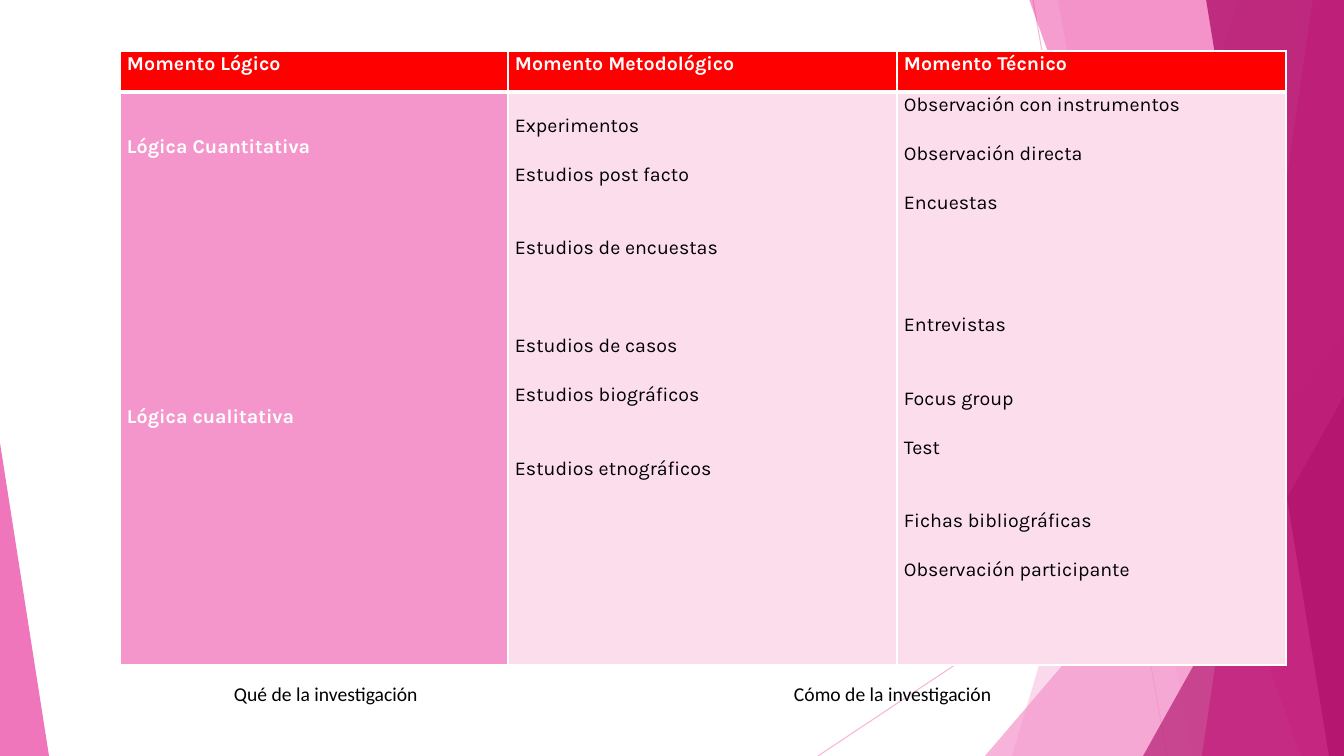
"""Build the slide on the logical, methodological and technical moments of research."""

from dataclasses import dataclass

from lxml import etree
from pptx import Presentation
from pptx import util as u
from pptx.dml.color import RGBColor
from pptx.enum import shapes, text
from pptx.oxml import ns

WHITE = RGBColor(0xFF, 0xFF, 0xFF)
BLACK = RGBColor(0x00, 0x00, 0x00)
RED = RGBColor(0xFF, 0x00, 0x00)
LIGHT_PINK = RGBColor(0xF4, 0x96, 0xCB)
PALE_PINK = RGBColor(0xFB, 0xDD, 0xEC)
PINK = RGBColor(0xEB, 0x3D, 0x9F)
MAGENTA = RGBColor(0xB2, 0x13, 0x6D)

SLIDE_W, SLIDE_H = 1344, 756
EMU_PER_PX = 12192000 / SLIDE_W
TEXT_SIZE = u.Pt(14)
LINE_PITCH = 17.5
TABLE_LEFT, TABLE_TOP = 120, 51
COLUMN_WIDTHS = (388, 389, 389)
ROW_HEIGHTS = (41, 573)


def px(length: int) -> u.Emu:
    """Turn pixels into EMU."""
    return u.Emu(round(length * EMU_PER_PX))


@dataclass(frozen=True)
class Ray:
    """A thin straight line behind the table."""

    x1: int
    y1: int
    x2: int
    y2: int


@dataclass(frozen=True)
class Band:
    """A full-height facet reaching the right edge of the slide."""

    top_x: int
    bottom_x: int
    color: RGBColor
    opacity: int


@dataclass(frozen=True)
class Wedge:
    """A right-angled triangle standing on the bottom edge."""

    left: int
    top: int
    width: int
    apex: int
    color: RGBColor
    opacity: int


@dataclass(frozen=True)
class Entry:
    """A line of a cell, with the number of empty lines above it."""

    wording: str
    lines_above: int = 0


@dataclass(frozen=True)
class Moment:
    """A table column: heading, entries and look of its body cell."""

    heading: str
    entries: tuple[Entry, ...]
    offset: int
    fill: RGBColor
    ink: RGBColor
    bold: bool


@dataclass(frozen=True)
class Caption:
    """A label below the table."""

    wording: str
    left: int


RAYS = (Ray(1033, 0, 1167, 756), Ray(1344, 406, 818, 756))
FACETS = (
    Band(1238, 1012, LIGHT_PINK, 36),
    Band(1058, 1192, LIGHT_PINK, 20),
    Wedge(985, 336, 359, 1, LIGHT_PINK, 72),
    Band(1029, 1301, PINK, 50),
    Band(1313, 1202, PINK, 70),
    Band(1206, 1329, MAGENTA, 80),
    Wedge(1143, 396, 201, 1, MAGENTA, 66),
    Wedge(0, 443, 49, 0, PINK, 70),
)
MOMENTS = (
    Moment("Momento Lógico",
           (Entry("Lógica Cuantitativa"), Entry("Lógica cualitativa", 10)),
           42, LIGHT_PINK, WHITE, True),
    Moment("Momento Metodológico",
           (Entry("Experimentos"), Entry("Estudios post facto", 1),
            Entry("Estudios de encuestas", 2), Entry("Estudios de casos", 3),
            Entry("Estudios biográficos", 1), Entry("Estudios etnográficos", 2)),
           21, PALE_PINK, BLACK, False),
    Moment("Momento Técnico",
           (Entry("Observación con instrumentos"), Entry("Observación directa", 1),
            Entry("Encuestas", 1), Entry("Entrevistas", 4), Entry("Focus group", 2),
            Entry("Test", 1), Entry("Fichas bibliográficas", 2),
            Entry("Observación participante", 1)),
           0, PALE_PINK, BLACK, False),
)
CAPTIONS = (Caption("Qué de la investigación", 234), Caption("Cómo de la investigación", 794))


def set_opacity(item, percent: int) -> None:
    """Make the colours of a shape or connector see-through."""
    for tint in item._element.spPr.iter(ns.qn("a:srgbClr")):
        etree.SubElement(tint, ns.qn("a:alpha"), val=str(percent * 1000))


def draw_ray(slide, ray: Ray) -> None:
    """Draw one thin line."""
    ends = map(px, (ray.x1, ray.y1, ray.x2, ray.y2))
    beam = slide.shapes.add_connector(shapes.MSO_CONNECTOR.STRAIGHT, *ends)
    beam.line.color.rgb = LIGHT_PINK
    beam.line.width = u.Pt(0.75)
    set_opacity(beam, 70)
    etree.SubElement(beam._element.spPr, ns.qn("a:effectLst"))


def draw_facet(slide, facet: Band | Wedge) -> None:
    """Draw one translucent facet."""
    if isinstance(facet, Band):
        outline = slide.shapes.build_freeform(facet.top_x, -1, scale=EMU_PER_PX)
        outline.add_line_segments(
            [(SLIDE_W, -1), (SLIDE_W, SLIDE_H), (facet.bottom_x, SLIDE_H)], close=True)
        pane = outline.convert_to_shape()
    else:
        box = map(px, (facet.left, facet.top, facet.width, SLIDE_H - facet.top))
        pane = slide.shapes.add_shape(shapes.MSO_SHAPE.ISOSCELES_TRIANGLE, *box)
        pane.adjustments[0] = facet.apex
    pane.shadow.inherit = False
    pane.fill.solid()
    pane.fill.fore_color.rgb = facet.color
    pane.line.fill.background()
    set_opacity(pane, facet.opacity)


def add_wording(paragraph, wording: str, font: str, ink: RGBColor, bold: bool = False) -> None:
    """Add one formatted run to a paragraph."""
    run = paragraph.add_run()
    run.text = wording
    run.font.name = font
    run.font.size = TEXT_SIZE
    run.font.bold = bold
    run.font.color.rgb = ink


def fill_cell(cell, entries: tuple[Entry, ...], offset: int, fill: RGBColor,
              ink: RGBColor, bold: bool, rules: dict[str, int]) -> None:
    """Write the entries of a cell and set its fill and white rules."""
    cell.margin_left = cell.margin_right = px(7)
    cell.margin_top, cell.margin_bottom = px(offset), 0
    cell.fill.solid()
    cell.fill.fore_color.rgb = fill
    for index, entry in enumerate(entries):
        frame = cell.text_frame
        paragraph = frame.add_paragraph() if index else frame.paragraphs[0]
        paragraph.line_spacing = 1.07
        paragraph.space_before = u.Pt(LINE_PITCH * entry.lines_above)
        add_wording(paragraph, entry.wording, "Karla", ink, bold)
    properties = cell._tc.get_or_add_tcPr()
    for index, (side, points) in enumerate(rules.items()):
        rule = etree.Element(ns.qn(f"a:ln{side}"), w=str(u.Pt(points)))
        paint = etree.SubElement(rule, ns.qn("a:solidFill"))
        etree.SubElement(paint, ns.qn("a:srgbClr"), val=str(WHITE))
        properties.insert(index, rule)


def draw_moments(slide) -> None:
    """Draw the table of the three moments."""
    box = map(px, (TABLE_LEFT, TABLE_TOP, sum(COLUMN_WIDTHS), sum(ROW_HEIGHTS)))
    table = slide.shapes.add_table(len(ROW_HEIGHTS), len(MOMENTS), *box).table
    table.horz_banding = False
    for row, height in zip(table.rows, ROW_HEIGHTS):
        row.height = px(height)
    for index, (moment, width) in enumerate(zip(MOMENTS, COLUMN_WIDTHS)):
        table.columns[index].width = px(width)
        fill_cell(table.cell(0, index), (Entry(moment.heading),), 0, RED, WHITE, True,
                  {"L": 1, "R": 1, "T": 1, "B": 3})
        fill_cell(table.cell(1, index), moment.entries, moment.offset, moment.fill,
                  moment.ink, moment.bold, {"L": 1, "R": 1, "T": 3, "B": 1})


def draw_caption(slide, caption: Caption) -> None:
    """Write one label below the table."""
    frame = slide.shapes.add_textbox(*map(px, (caption.left, 677, 300, 34))).text_frame
    frame.word_wrap = True
    frame.margin_left = frame.margin_right = 0
    frame.vertical_anchor = text.MSO_ANCHOR.MIDDLE
    add_wording(frame.paragraphs[0], caption.wording, "Calibri", BLACK)


def main() -> None:
    """Build and save the slide."""
    deck = Presentation()
    deck.slide_width, deck.slide_height = px(SLIDE_W), px(SLIDE_H)
    slide = deck.slides.add_slide(deck.slide_layouts[6])
    for ray in RAYS:
        draw_ray(slide, ray)
    for facet in FACETS:
        draw_facet(slide, facet)
    draw_moments(slide)
    for caption in CAPTIONS:
        draw_caption(slide, caption)
    deck.save("out.pptx")


if __name__ == "__main__":
    main()
